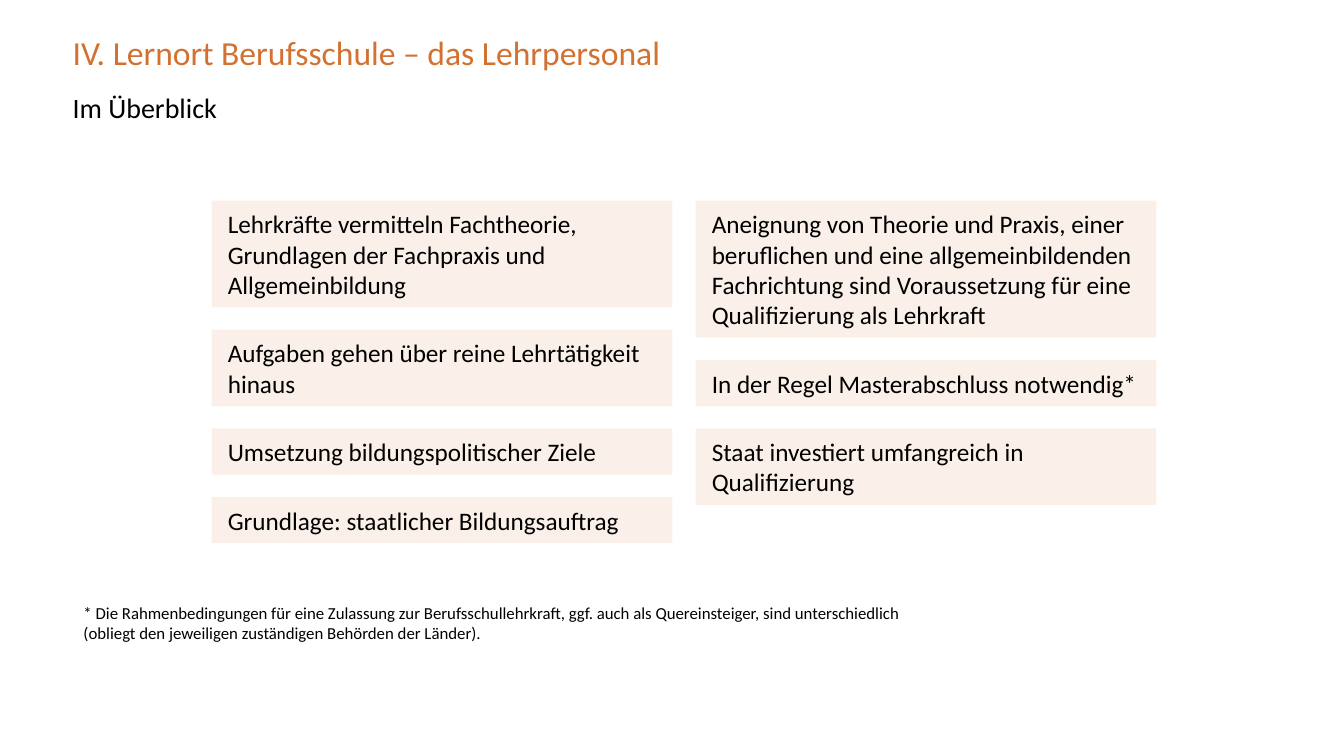
from lxml import etree
from pptx import Presentation
from pptx.dml.color import RGBColor
from pptx.enum.shapes import MSO_SHAPE
from pptx.enum.text import MSO_ANCHOR, MSO_AUTO_SIZE, PP_ALIGN
from pptx.oxml.ns import qn
from pptx.util import Inches, Pt

RECTANGLE = MSO_SHAPE.RECTANGLE
TOP, MIDDLE = MSO_ANCHOR.TOP, MSO_ANCHOR.MIDDLE
FIT_SHAPE = MSO_AUTO_SIZE.SHAPE_TO_FIT_TEXT
LEFT = PP_ALIGN.LEFT

COLORS = {"accent": "D37230", "text": "000000"}
FONT = "Calibri"

TITLE = "IV. Lernort Berufsschule – das Lehrpersonal"
SUBTITLE = "Im Überblick"
FOOTNOTE = (
    "* Die Rahmenbedingungen für eine Zulassung zur Berufsschullehrkraft, ggf. auch als "
    "Quereinsteiger, sind unterschiedlich (obliegt den jeweiligen zuständigen Behörden der Länder)."
)
# Each column: statements with the number of lines they fill
COLUMNS = [
    [
        ("Lehrkräfte vermitteln Fachtheorie, Grundlagen der Fachpraxis und Allgemeinbildung", 3),
        ("Aufgaben gehen über reine Lehrtätigkeit hinaus", 2),
        ("Umsetzung bildungspolitischer Ziele", 1),
        ("Grundlage: staatlicher Bildungsauftrag", 1),
    ],
    [
        ("Aneignung von Theorie und Praxis, einer beruflichen und eine allgemeinbildenden "
         "Fachrichtung sind Voraussetzung für eine Qualifizierung als Lehrkraft", 4),
        ("In der Regel Masterabschluss notwendig*", 1),
        ("Staat investiert umfangreich in Qualifizierung", 2),
    ],
]

COLUMN_LEFT, COLUMN_TOP, COLUMN_PITCH = 2.1, 1.99, 4.8
CARD_WIDTH, CARD_GAP = 4.57, 0.22
LINE_HEIGHT, PAD_X, PAD_Y = 0.3, 0.16, 0.08
FILL_ALPHA = 10


def write(shape, text, size, color, insets, anchor=TOP):
    """Fill a shape with one left-aligned run; insets are (horizontal, vertical) inches."""
    frame = shape.text_frame
    frame.word_wrap = True
    frame.vertical_anchor = anchor
    frame.margin_left = frame.margin_right = Inches(insets[0])
    frame.margin_top = frame.margin_bottom = Inches(insets[1])
    paragraph = frame.paragraphs[0]
    paragraph.alignment = LEFT
    run = paragraph.add_run()
    run.text = text
    run.font.name = FONT
    run.font.size = Pt(size)
    run.font.color.rgb = RGBColor.from_string(COLORS[color])
    return frame


def add_label(slide, text, box, size, color="text", insets=(0, 0)):
    label = slide.shapes.add_textbox(*map(Inches, box))
    return write(label, text, size, color, insets)


def add_card(slide, text, left, top, height):
    card = slide.shapes.add_shape(
        RECTANGLE, Inches(left), Inches(top), Inches(CARD_WIDTH), Inches(height))
    card.shadow.inherit = False
    card.line.fill.background()
    card.fill.solid()
    card.fill.fore_color.rgb = RGBColor.from_string(COLORS["accent"])
    tint = card.fill._xPr.find(qn("a:solidFill"))[0]
    etree.SubElement(tint, qn("a:alpha"), val=str(FILL_ALPHA * 1000))
    frame = write(card, text, 18, "text", (PAD_X, PAD_Y), MIDDLE)
    frame.auto_size = FIT_SHAPE


def main():
    prs = Presentation()
    prs.slide_width, prs.slide_height = Inches(13.33), Inches(7.5)
    slide = prs.slides.add_slide(prs.slide_layouts[6])

    add_label(slide, TITLE, (0.72, 0.32, 9.84, 0.49), 24, "accent")
    footnote = add_label(slide, FOOTNOTE, (0.73, 5.93, 8.6, 0.5), 12, insets=(0.1, 0.05))
    footnote.auto_size = FIT_SHAPE
    add_label(slide, SUBTITLE, (0.72, 0.9, 12.09, 0.49), 20)

    for index, statements in enumerate(COLUMNS):
        top = COLUMN_TOP
        for text, lines in statements:
            height = lines * LINE_HEIGHT + 2 * PAD_Y
            add_card(slide, text, COLUMN_LEFT + index * COLUMN_PITCH, top, height)
            top += height + CARD_GAP

    prs.save("out.pptx")


if __name__ == "__main__":
    main()
